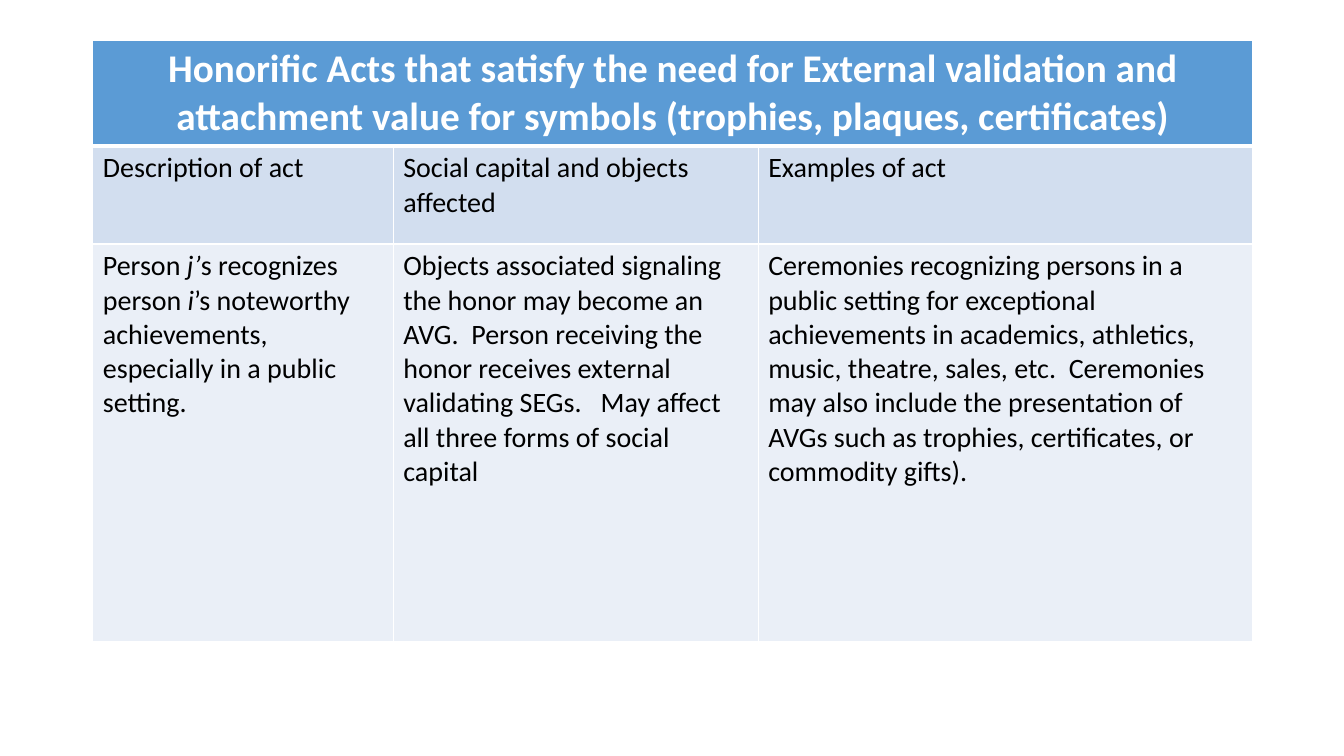
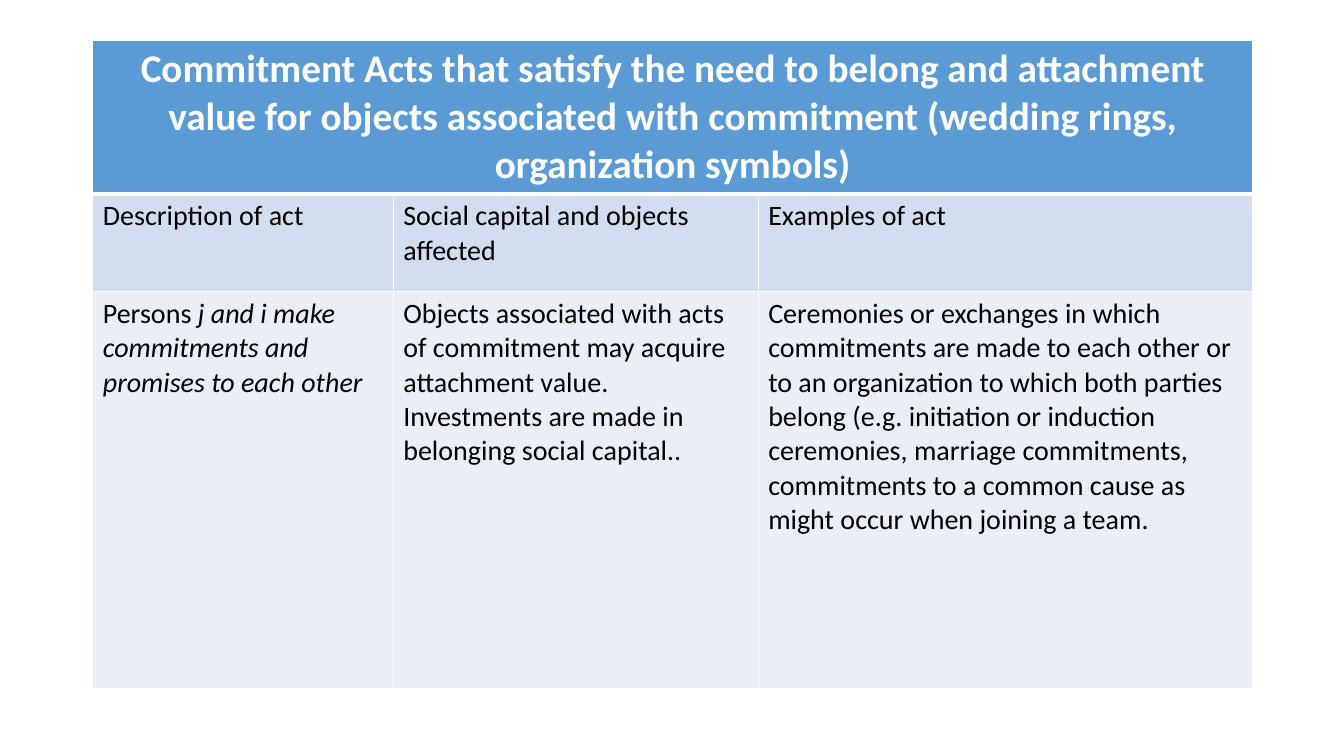
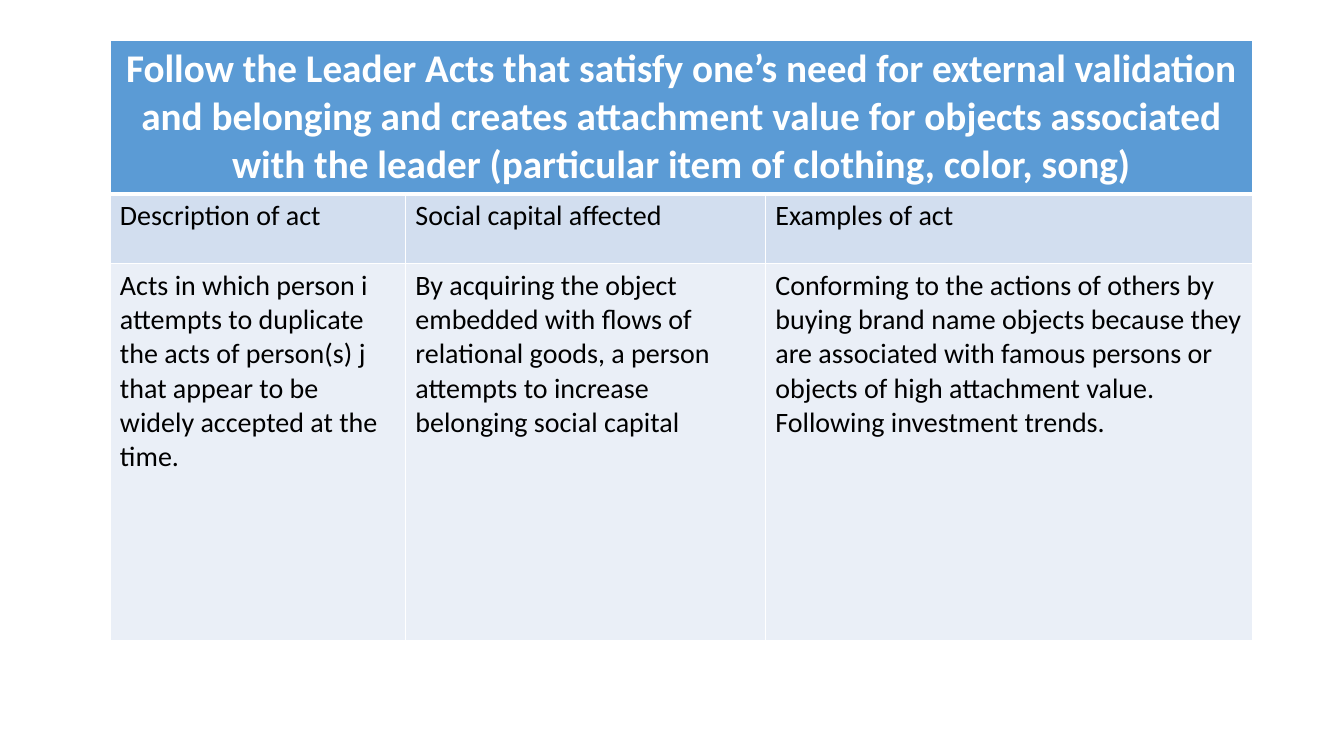
from lxml import etree
from pptx import Presentation
from pptx.dml.color import RGBColor
from pptx.enum import text
from pptx.oxml import ns
from pptx.util import Inches, Pt

COLOURS = {"heading": "5B9BD5", "labels": "D2DEEF", "details": "EAEFF7",
           "light": "FFFFFF", "dark": "000000"}
FONT = "Calibri"

# Look of the three table rows, from top to bottom
ROW_STYLES = [
    {"fill": "heading", "align": text.PP_ALIGN.CENTER,
     "font": {"size": Pt(28), "bold": True}, "colour": "light"},
    {"fill": "labels", "align": text.PP_ALIGN.LEFT,
     "font": {"size": Pt(20), "bold": False}, "colour": "dark"},
    {"fill": "details", "align": text.PP_ALIGN.LEFT,
     "font": {"size": Pt(20), "bold": False}, "colour": "dark"},
]
TABLE_TOP = 0.4
THIN, THICK = 1, 3

# Asterisks enclose italic words
ACTS = [
    {"left": 0.92, "columns": [2.98, 3.62, 4.9], "rows": [1.05, 0.97, 3.94],
     "heading": "Honorific Acts that satisfy the need for External validation and "
                "attachment value for symbols (trophies, plaques, certificates)",
     "labels": ["Description of act", "Social capital and objects affected",
                "Examples of act"],
     "details": [
         "Person *j’*s recognizes person *i*’s noteworthy achievements, "
         "especially in a public setting.",
         "Objects associated signaling the honor may become an AVG.  Person "
         "receiving the honor receives external validating SEGs.   May affect "
         "all three forms of social capital",
         "Ceremonies recognizing persons in a public setting for exceptional "
         "achievements in academics, athletics, music, theatre, sales, etc.  "
         "Ceremonies may also include the presentation of AVGs such as "
         "trophies, certificates, or commodity gifts)."]},
    {"left": 0.92, "columns": [2.98, 3.62, 4.9], "rows": [1.52, 0.97, 3.94],
     "heading": "Commitment Acts that satisfy the need to belong and attachment "
                "value for objects associated with commitment (wedding rings, "
                "organization symbols)",
     "labels": ["Description of act", "Social capital and objects affected",
                "Examples of act"],
     "details": [
         "Persons *j and i make commitments and promises to each other*",
         "Objects associated with acts of commitment may acquire attachment "
         "value.  Investments are made in belonging social capital..",
         "Ceremonies or exchanges in which commitments are made to each other "
         "or to an organization to which both parties belong (e.g. initiation "
         "or induction ceremonies, marriage commitments, commitments to a "
         "common cause as might occur when joining a team."]},
    {"left": 1.09, "columns": [2.93, 3.57, 4.83], "rows": [1.52, 0.69, 3.74],
     "heading": "Follow the Leader Acts that satisfy one’s need for external "
                "validation and belonging and creates attachment value for "
                "objects associated with the leader (particular item of "
                "clothing, color, song)",
     "labels": ["Description of act", "Social capital affected",
                "Examples of act"],
     "details": [
         "Acts in which person i attempts to duplicate the acts of person(s) j "
         "that appear to be widely accepted at the time.",
         "By acquiring the object embedded with flows of relational goods, a "
         "person attempts to increase belonging social capital",
         "Conforming to the actions of others by buying brand name objects "
         "because they are associated with famous persons or objects of high "
         "attachment value.  Following investment trends."]},
]


def rgb(name):
    return RGBColor.from_string(COLOURS[name])


def set_borders(cell, widths):
    """Draw light lines on the cell's sides; widths maps side to points."""
    properties = cell._tc.get_or_add_tcPr()
    for side in ("L", "R", "T", "B"):
        line = etree.SubElement(properties, ns.qn(f"a:ln{side}"),
                                w=str(Pt(widths[side])))
        solid = etree.SubElement(line, ns.qn("a:solidFill"))
        etree.SubElement(solid, ns.qn("a:srgbClr"), val=COLOURS["light"])


def write_cell(cell, words, style):
    paragraph = cell.text_frame.paragraphs[0]
    paragraph.alignment = style["align"]
    for index, part in enumerate(words.split("*")):
        if not part:
            continue
        run = paragraph.add_run()
        run.text = part
        font_values = {**style["font"], "name": FONT, "italic": index % 2 == 1}
        for attribute, value in font_values.items():
            setattr(run.font, attribute, value)
        run.font.color.rgb = rgb(style["colour"])


def add_act_table(slide, act, left, top):
    """Place a heading row, a label row and a detail row at left, top."""
    columns, rows = act["columns"], act["rows"]
    table = slide.shapes.add_table(
        len(rows), len(columns), Inches(left), Inches(top),
        Inches(sum(columns)), Inches(sum(rows))).table
    for column, width in zip(table.columns, columns):
        column.width = Inches(width)
    for row, height in zip(table.rows, rows):
        row.height = Inches(height)

    # Fills and borders, with a thick line under the heading
    for r, style in enumerate(ROW_STYLES):
        for cell in table.rows[r].cells:
            set_borders(cell, {"L": THIN, "R": THIN,
                               "T": THICK if r == 1 else THIN,
                               "B": THICK if r == 0 else THIN})
            cell.fill.solid()
            cell.fill.fore_color.rgb = rgb(style["fill"])

    # Wording
    table.cell(0, 0).merge(table.cell(0, len(columns) - 1))
    wording = [[act["heading"]], act["labels"], act["details"]]
    for r, (style, texts) in enumerate(zip(ROW_STYLES, wording)):
        for c, words in enumerate(texts):
            write_cell(table.cell(r, c), words, style)


def main():
    deck = Presentation()
    deck.slide_width, deck.slide_height = Inches(13.33), Inches(7.5)
    blank_layout = deck.slide_layouts[6]
    for act in ACTS:
        slide = deck.slides.add_slide(blank_layout)
        add_act_table(slide, act, act["left"], TABLE_TOP)
    deck.save("out.pptx")


if __name__ == "__main__":
    main()
